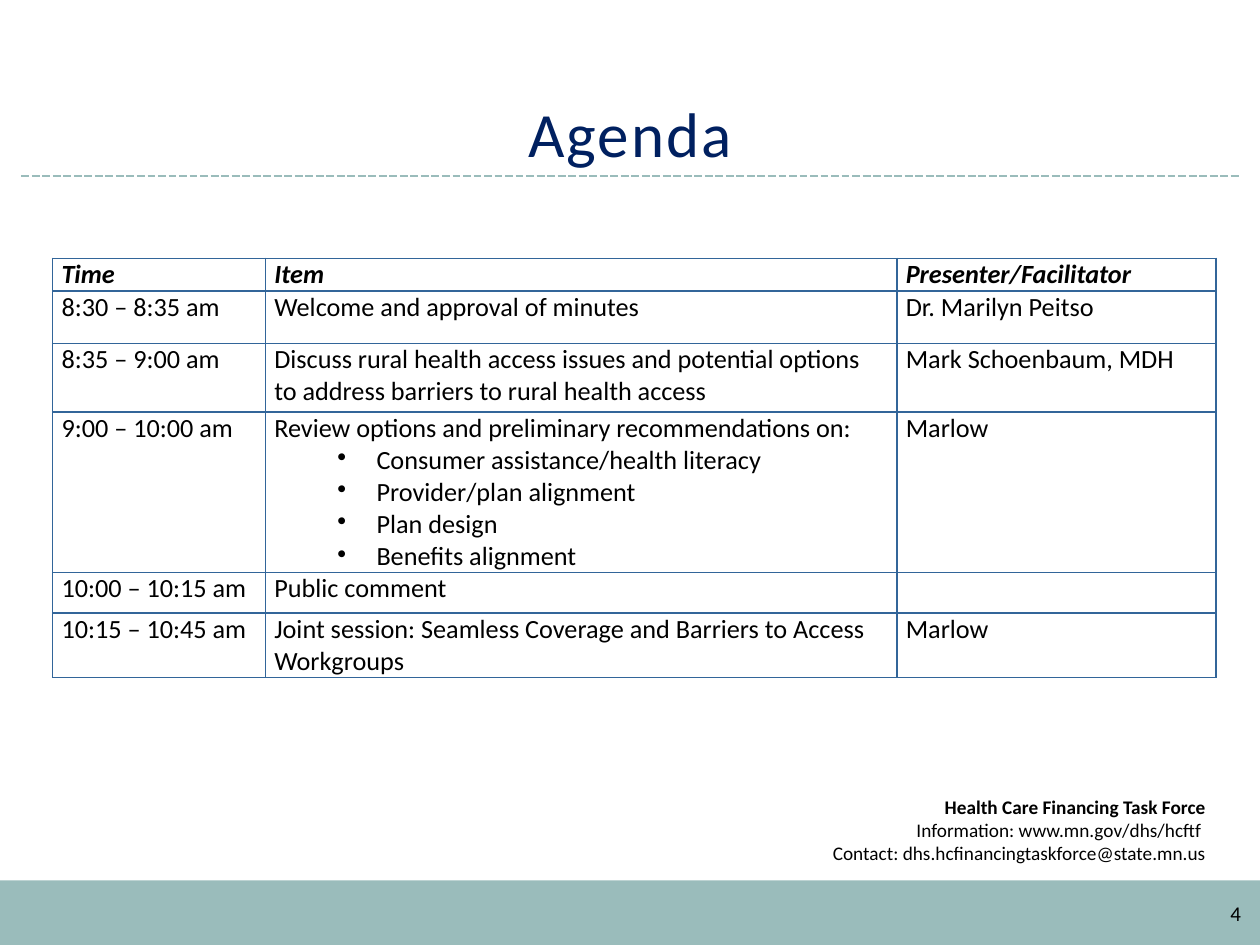
from lxml import etree
from pptx import Presentation
from pptx.dml.color import RGBColor
from pptx.enum.dml import MSO_LINE
from pptx.enum.shapes import MSO_CONNECTOR, MSO_SHAPE
from pptx.enum.text import MSO_ANCHOR, PP_ALIGN
from pptx.oxml.ns import qn
from pptx.util import Cm, Pt

RECT, LINE = MSO_SHAPE.RECTANGLE, MSO_CONNECTOR.STRAIGHT
DASH, BOTTOM, TOP = MSO_LINE.SQUARE_DOT, MSO_ANCHOR.BOTTOM, MSO_ANCHOR.TOP
LEFT, CENTER, RIGHT = PP_ALIGN.LEFT, PP_ALIGN.CENTER, PP_ALIGN.RIGHT

COLORS = {"sage": "9ABCBB", "navy": "002060", "blue": "326599",
          "black": "000000", "white": "FFFFFF"}

TITLE = {"size": Pt(36)}
HEAD = {"size": Pt(15), "bold": True, "italic": True}
BODY = {"size": Pt(15), "bold": False, "italic": False}
NOTE = {"size": Pt(11), "bold": False}
STRONG = {"size": Pt(11), "bold": True}
PAGE = {"size": Pt(12)}

COLS = [4.29, 12.73, 6.43]
ROWS = [0.66, 1.05, 1.39, 3.23, 0.82, 1.3]
AGENDA = [
    (["Time"], ["Item"], ["Presenter/Facilitator"]),
    (["8:30 – 8:35 am"], ["Welcome and approval of minutes"],
     ["Dr. Marilyn Peitso"]),
    (["8:35 – 9:00 am"],
     ["Discuss rural health access issues and potential options "
      "to address barriers to rural health access"],
     ["Mark Schoenbaum, MDH"]),
    (["9:00 – 10:00 am"],
     ["Review options and preliminary recommendations on:",
      "Consumer assistance/health literacy", "Provider/plan alignment",
      "Plan design", "Benefits alignment"],
     ["Marlow"]),
    (["10:00 – 10:15 am"], ["Public comment"], []),
    (["10:15 – 10:45 am"],
     ["Joint session: Seamless Coverage and Barriers to Access Workgroups"],
     ["Marlow"]),
]


def rgb(name):
    return RGBColor.from_string(COLORS[name])


def add_run(para, text, form, color="black"):
    run = para.add_run()
    run.text = text
    run.font.name = "Calibri"
    run.font.color.rgb = rgb(color)
    for key, value in form.items():
        setattr(run.font, key, value)
    return run


def add_rect(slide, box, color):
    rect = slide.shapes.add_shape(RECT, *map(Cm, box))
    rect.shadow.inherit = False
    rect.fill.solid()
    rect.fill.fore_color.rgb = rgb(color)
    rect.line.fill.background()
    return rect


def add_rule(slide, start, end):
    rule = slide.shapes.add_connector(LINE, *map(Cm, start + end))
    rule.line.color.rgb = rgb("sage")
    rule.line.width = Pt(1.5)
    rule.line.dash_style = DASH
    etree.SubElement(rule._element.spPr, qn("a:effectLst"))


def add_text(slide, box, text, form, align, color="black", anchor=TOP):
    frame = slide.shapes.add_textbox(*map(Cm, box)).text_frame
    frame.word_wrap = True
    frame.vertical_anchor = anchor
    para = frame.paragraphs[0]
    para.alignment = align
    return para, add_run(para, text, form, color)


def add_bullet(para):
    props = para._p.get_or_add_pPr()
    props.set("marL", str(Cm(2.06)))
    props.set("indent", str(Cm(-0.79)))
    etree.SubElement(props, qn("a:buChar"), char="•")


def add_border(cell):
    props = cell._tc.get_or_add_tcPr()
    for side in ("lnL", "lnR", "lnT", "lnB"):
        edge = etree.SubElement(props, qn("a:" + side), w=str(Pt(1)))
        fill = etree.SubElement(edge, qn("a:solidFill"))
        etree.SubElement(fill, qn("a:srgbClr"), val=COLORS["blue"])


def fill_cell(cell, lines, form):
    cell.margin_left = cell.margin_right = Cm(0.18)
    cell.margin_top = cell.margin_bottom = 0
    add_border(cell)
    cell.fill.background()
    frame = cell.text_frame
    for i, text in enumerate(lines):
        para = frame.add_paragraph() if i else frame.paragraphs[0]
        para.alignment = LEFT
        if i:
            add_bullet(para)
        add_run(para, text, form)


def add_agenda(slide):
    table = slide.shapes.add_table(
        len(ROWS), len(COLS), Cm(1.06), Cm(5.21),
        Cm(sum(COLS)), Cm(sum(ROWS))).table
    table.first_row = table.horz_banding = False
    for col, width in zip(table.columns, COLS):
        col.width = Cm(width)
    for r, (row, height) in enumerate(zip(table.rows, ROWS)):
        row.height = Cm(height)
        for cell, lines in zip(row.cells, AGENDA[r]):
            fill_cell(cell, lines, BODY if r else HEAD)


def add_contact(slide):
    frame = add_rect(slide, (11.53, 15.9, 13.03, 1.7), "white").text_frame
    frame.word_wrap = True
    frame.vertical_anchor = TOP
    first, last = frame.paragraphs[0], frame.add_paragraph()
    first.alignment = last.alignment = RIGHT
    add_run(first, "Health Care Financing Task Force", STRONG)
    first.add_line_break()
    add_run(first, "Information: www.mn.gov/dhs/hcftf ", NOTE)
    add_run(last, "Contact: dhs.hcfinancingtaskforce@state.mn.us", NOTE)


def main():
    deck = Presentation()
    deck.slide_width, deck.slide_height = Cm(25.4), Cm(19.05)
    slide = deck.slides.add_slide(deck.slide_layouts[6])

    # Footer band, title rule and contact details
    add_rect(slide, (0, 17.75, 25.4, 1.3), "sage")
    add_rule(slide, (0.43, 3.55), (24.97, 3.55))
    add_contact(slide)

    # Title with slightly spaced letters
    para, run = add_text(slide, (0.85, 0.64, 23.7, 2.92), "Agenda", TITLE,
                         CENTER, "navy", BOTTOM)
    para.line_spacing = Pt(40)
    run.font._element.set("spc", "120")

    # Agenda table
    add_agenda(slide)

    # Page number
    add_text(slide, (23.77, 18.03, 1.5, 1.02), "4", PAGE, RIGHT)

    deck.save("out.pptx")


if __name__ == "__main__":
    main()
